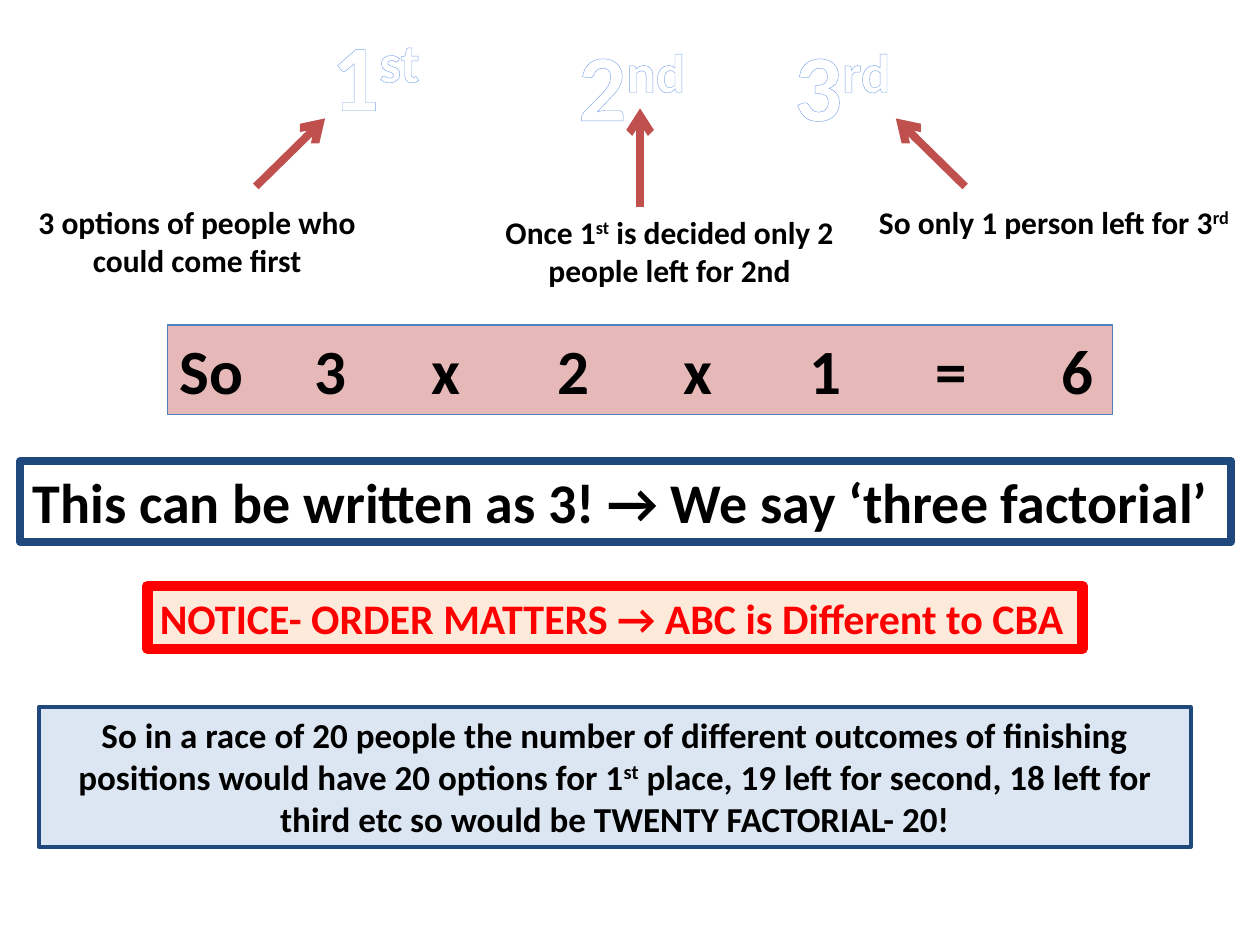
from lxml import etree
from pptx import Presentation
from pptx.dml.color import RGBColor
from pptx.enum.shapes import MSO_CONNECTOR
from pptx.enum.text import MSO_AUTO_SIZE, PP_ALIGN
from pptx.oxml.ns import qn
from pptx.util import Inches, Pt

STRAIGHT = MSO_CONNECTOR.STRAIGHT
LEFT, CENTER = PP_ALIGN.LEFT, PP_ALIGN.CENTER
GROW = MSO_AUTO_SIZE.SHAPE_TO_FIT_TEXT
FONT = "Calibri"
BLANK_LAYOUT = 6
COLORS = {
    "white": "FFFFFF",
    "black": "000000",
    "outline": "7EA6EA",
    "arrow": "C0504D",
    "pink": "E6B9B8",
    "blue": "4F81BD",
    "navy": "1F497D",
    "pale_blue": "DCE6F2",
    "cream": "FDEADA",
    "red": "FF0000",
}


def color(name):
    return RGBColor.from_string(COLORS[name])


def add_text(slide, box, parts, size, ink="black", align=CENTER, wrap=True):
    shape = slide.shapes.add_textbox(*(Inches(length) for length in box))
    frame = shape.text_frame
    frame.word_wrap = wrap
    frame.auto_size = GROW
    para = frame.paragraphs[0]
    para.alignment = align
    for index, words in enumerate(parts):
        span = para.add_run()
        span.text = words
        span.font.name = FONT
        span.font.size = Pt(size)
        span.font.bold = True
        span.font.color.rgb = color(ink)
        if index % 2:
            span.font._element.set("baseline", "30000")
    return shape


def outline_text(shape, ink, width):
    for span in shape.text_frame.paragraphs[0].runs:
        line = etree.Element(qn("a:ln"), w=str(Pt(width)))
        fill = etree.SubElement(line, qn("a:solidFill"))
        etree.SubElement(fill, qn("a:srgbClr"), val=COLORS[ink])
        span.font._element.insert(0, line)


def add_arrow(slide, start, end):
    points = [Inches(length) for length in start + end]
    arrow = slide.shapes.add_connector(STRAIGHT, *points)
    arrow.line.color.rgb = color("arrow")
    arrow.line.width = Pt(4.5)
    etree.SubElement(arrow.line._get_or_add_ln(), qn("a:tailEnd"), type="arrow")
    etree.SubElement(arrow._element.spPr, qn("a:effectLst"))


def add_place(slide, heading_box, heading, start, end, caption_box, caption):
    ordinal = add_text(slide, heading_box, heading, 54, "white", wrap=False)
    outline_text(ordinal, "outline", 2.48)
    add_arrow(slide, start, end)
    add_text(slide, caption_box, caption, 18)


def add_banner(slide, box, parts, size, line, width, fill=None, ink="black", align=LEFT):
    banner = add_text(slide, box, parts, size, ink, align)
    banner.line.color.rgb = color(line)
    banner.line.width = Pt(width)
    if fill:
        banner.fill.solid()
        banner.fill.fore_color.rgb = color(fill)
    return banner


def set_tabs(shape, stops):
    properties = shape.text_frame.paragraphs[0]._p.get_or_add_pPr()
    tabs = etree.SubElement(properties, qn("a:tabLst"))
    for stop in stops:
        etree.SubElement(tabs, qn("a:tab"), pos=str(Inches(stop)), algn="l")


def build_slide(deck):
    slide = deck.slides.add_slide(deck.slide_layouts[BLANK_LAYOUT])
    add_place(slide, (2.5, 0.08, 0.96, 1.01), ["1", "st"],
              (2.03, 1.48), (2.58, 0.94), (0, 1.56, 3.13, 0.71),
              ["3 options of people who could come first"])
    add_place(slide, (4.45, 0.16, 1.13, 1.01), ["2", "nd"],
              (5.08, 1.64), (5.08, 0.86), (3.75, 1.64, 3.13, 0.71),
              ["Once 1", "st", " is decided only 2 people left for 2nd"])
    add_place(slide, (6.17, 0.16, 1.03, 1.01), ["3", "rd"],
              (7.66, 1.48), (7.11, 0.94), (6.8, 1.56, 3.13, 0.71),
              ["So only 1 person left for 3", "rd"])

    product = add_banner(slide, (1.33, 2.58, 7.5, 0.71),
                         ["So\t3\tx\t2\tx\t1\t=\t6"], 36, "blue", 0.75, "pink")
    set_tabs(product, [1.07, 2, 3, 4, 5, 6, 7])
    add_banner(slide, (0.16, 3.66, 9.61, 0.64),
               ["This can be written as 3! → We say ‘three factorial’"],
               32, "navy", 4.5)
    add_banner(slide, (1.17, 4.65, 7.42, 0.5),
               ["NOTICE- ORDER MATTERS → ABC is Different to CBA"],
               24, "red", 6, "cream", "red")
    add_banner(slide, (0.31, 5.61, 9.14, 1.11),
               ["So in a race of 20 people the number of different outcomes of "
                "finishing positions would have 20 options for 1", "st",
                " place, 19 left for second, 18 left for third etc so would be "
                "TWENTY FACTORIAL- 20!"],
               20, "navy", 2.25, "pale_blue", align=CENTER)


def main():
    deck = Presentation()
    deck.slide_width = Inches(10)
    deck.slide_height = Inches(7.5)
    build_slide(deck)
    deck.save("out.pptx")


if __name__ == "__main__":
    main()
